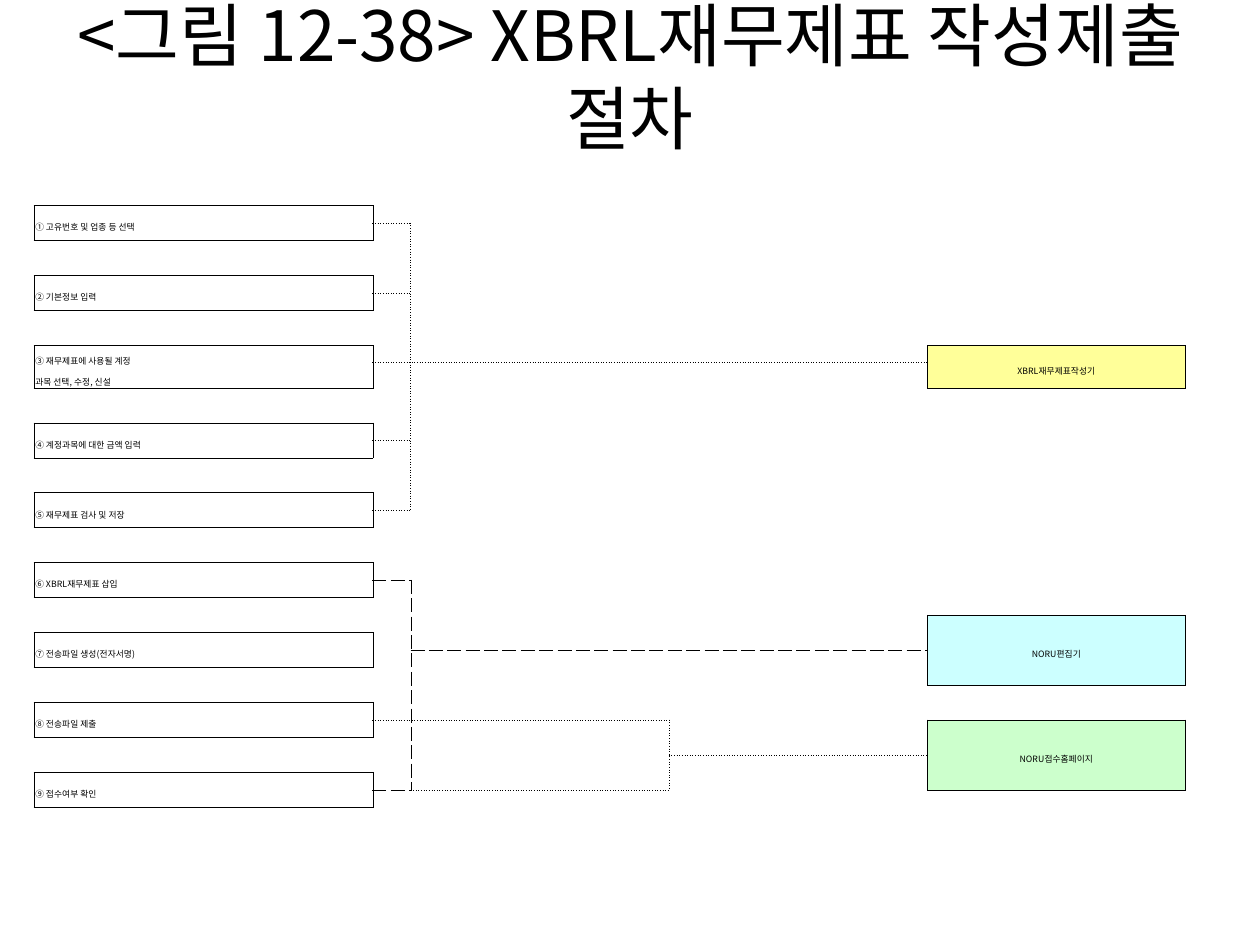
import dataclasses

import lxml.etree
import pptx
import pptx.dml.color
import pptx.enum.text
import pptx.oxml.ns
import pptx.util

Inches = pptx.util.Inches
Align = pptx.enum.text.PP_ALIGN
Anchor = pptx.enum.text.MSO_ANCHOR
qn = pptx.oxml.ns.qn


@dataclasses.dataclass(frozen=True)
class Theme:
    font: str = "Noto Sans CJK KR"
    ink: str = "000000"
    yellow: str = "FFFF99"
    cyan: str = "CCFFFF"
    green: str = "CCFFCC"
    title: float = 39.6
    body: float = 5


@dataclasses.dataclass(frozen=True)
class Pen:
    width: float
    dash: str = "solid"


@dataclasses.dataclass(frozen=True)
class Box:
    text: str
    row: int
    col: int
    span: int
    pen: Pen
    align: Align
    fill: str = ""


THEME = Theme()
SOLID, HAIR = Pen(0.56), Pen(0.28)
DOT, FINE, DASH = Pen(0.56, "dot"), Pen(0.28, "dot"), Pen(0.28, "dash")
ROWS = 36
COLS = [2.69, 0.3, 2.05, 2.05, 2.05]
STEPS = [
    "① 고유번호 및 업종 등 선택",
    "② 기본정보 입력",
    "③ 재무제표에 사용될 계정\n과목 선택, 수정, 신설",
    "④ 계정과목에 대한 금액 입력",
    "⑤ 재무제표 검사 및 저장",
    "⑥ XBRL재무제표 삽입",
    "⑦ 전송파일 생성(전자서명)",
    "⑧ 전송파일 제출",
    "⑨ 접수여부 확인",
]
BOXES = [Box(t, 1 + 4 * i, 0, 2, SOLID, Align.JUSTIFY)
         for i, t in enumerate(STEPS)]
BOXES += [
    Box("XBRL재무제표작성기", 9, 4, 2, HAIR, Align.CENTER, THEME.yellow),
    Box("NORU편집기", 24, 4, 4, HAIR, Align.CENTER, THEME.cyan),
    Box("NORU접수홈페이지", 30, 4, 4, HAIR, Align.CENTER, THEME.green),
]


def rgb(code: str) -> pptx.dml.color.RGBColor:
    return pptx.dml.color.RGBColor.from_string(code)


def write(frame, text: str, *, size: float, align=Align.LEFT, gap: float = 1.0) -> None:
    for i, line in enumerate(text.split("\n")):
        para = frame.add_paragraph() if i else frame.paragraphs[0]
        para.alignment, para.line_spacing = align, gap
        if not line:
            # An empty cell keeps a small type size so its row stays low
            lxml.etree.SubElement(para._p, qn("a:endParaRPr"), sz=str(int(size * 100)))
            continue
        run = para.add_run()
        run.text = line
        run.font.size = pptx.util.Pt(size)
        run.font.name = THEME.font
        run.font.color.rgb = rgb(THEME.ink)
        lxml.etree.SubElement(run.font._element, qn("a:ea"), typeface=THEME.font)


class Grid:
    """Table whose cell borders draw the boxes and the lines between them."""

    def __init__(self, table) -> None:
        self.table = table
        self.edges: dict[tuple[int, int, str], Pen] = {}

    def flat(self, row: int, first: int, last: int, pen: Pen) -> None:
        """Line above a row, over columns first to last."""
        for col in range(first, last + 1):
            self.edges[row - 1, col, "B"] = self.edges[row, col, "T"] = pen

    def tall(self, col: int, first: int, last: int, pen: Pen) -> None:
        """Line left of a column, along rows first to last."""
        for row in range(first, last + 1):
            self.edges[row, col - 1, "R"] = self.edges[row, col, "L"] = pen

    def frame(self, box: Box) -> None:
        end = box.row + box.span
        for row in (box.row, end):
            self.flat(row, box.col, box.col, box.pen)
        for col in (box.col, box.col + 1):
            self.tall(col, box.row, end - 1, box.pen)

    def merge(self, top: int, left: int, low: int, right: int) -> None:
        self.table.cell(top, left).merge(self.table.cell(low, right))

    def ink(self) -> None:
        """Write all four borders of every cell."""
        for row in range(ROWS):
            for col in range(len(COLS)):
                props = self.table.cell(row, col)._tc.get_or_add_tcPr()
                for spot, side in enumerate("LRTB"):
                    pen = self.edges.get((row, col, side))
                    line = lxml.etree.Element(qn("a:ln" + side))
                    props.insert(spot, line)
                    if pen is None:
                        lxml.etree.SubElement(line, qn("a:noFill"))
                        continue
                    line.set("w", str(int(pptx.util.Pt(pen.width))))
                    fill = lxml.etree.SubElement(line, qn("a:solidFill"))
                    lxml.etree.SubElement(fill, qn("a:srgbClr"), val=THEME.ink)
                    lxml.etree.SubElement(line, qn("a:prstDash"), val=pen.dash)


def head(slide) -> None:
    shape = slide.shapes.add_textbox(Inches(0.5), Inches(0.3), Inches(9), Inches(1.25))
    frame = shape.text_frame
    frame.word_wrap = True
    frame.vertical_anchor = Anchor.MIDDLE
    frame.margin_bottom = Inches(0.7)
    write(frame, "<그림 12-38> XBRL재무제표 작성제출 절차",
          size=THEME.title, align=Align.CENTER)


def chart(slide) -> None:
    table = slide.shapes.add_table(ROWS, len(COLS), Inches(0.27), Inches(1.53),
                                   Inches(sum(COLS)), Inches(5)).table
    table.first_row = table.horz_banding = False
    for col, width in zip(table.columns, COLS):
        col.width = Inches(width)
    for row in table.rows:
        row.height = Inches(10 / 72)
    table.rows[0].height = Inches(0.09)
    table.rows[10].height = Inches(0.2)
    grid = Grid(table)

    # Boxes and plain cells
    texts = {(box.row, box.col): box for box in BOXES}
    for row in range(ROWS):
        for col in range(len(COLS)):
            cell = table.cell(row, col)
            cell.margin_left = cell.margin_right = Inches(0.01)
            cell.margin_top = cell.margin_bottom = Inches(0.01)
            cell.vertical_anchor = Anchor.MIDDLE
            cell.fill.background()
            box = texts.get((row, col))
            if box is None:
                write(cell.text_frame, "", size=THEME.body)
                continue
            if box.fill:
                cell.fill.solid()
                cell.fill.fore_color.rgb = rgb(box.fill)
            write(cell.text_frame, box.text, size=THEME.body, align=box.align, gap=1.6)
    for box in BOXES:
        grid.merge(box.row, box.col, box.row + box.span - 1, box.col)
        grid.frame(box)
    for row in (*range(29), ROWS - 1):
        grid.merge(row, 2, row, 3)
        # The merged cell takes the right border of its last column
        if (row, 3, "R") in grid.edges:
            grid.edges[row, 2, "R"] = grid.edges[row, 3, "R"]
    grid.merge(21, 4, 22, 4)

    # Steps 1 to 5 lead to the writer
    for row in range(2, 19, 4):
        grid.flat(row, 1, 1, DOT)
    grid.tall(2, 2, 17, DOT)
    grid.flat(10, 2, 3, DOT)

    # Steps 6 to 9 lead to the editor
    for row in (22, 34):
        grid.flat(row, 1, 1, DASH)
    grid.tall(2, 22, 33, DASH)
    grid.flat(26, 2, 3, DASH)

    # Steps 8 and 9 lead to the home page
    grid.flat(30, 1, 2, FINE)
    grid.flat(34, 2, 2, FINE)
    grid.tall(3, 30, 33, FINE)
    grid.flat(32, 3, 3, FINE)
    grid.ink()


def main() -> None:
    deck = pptx.Presentation()
    deck.slide_width, deck.slide_height = Inches(10), Inches(7.5)
    slide = deck.slides.add_slide(deck.slide_layouts[6])
    head(slide)
    chart(slide)
    deck.save("out.pptx")


if __name__ == "__main__":
    main()
